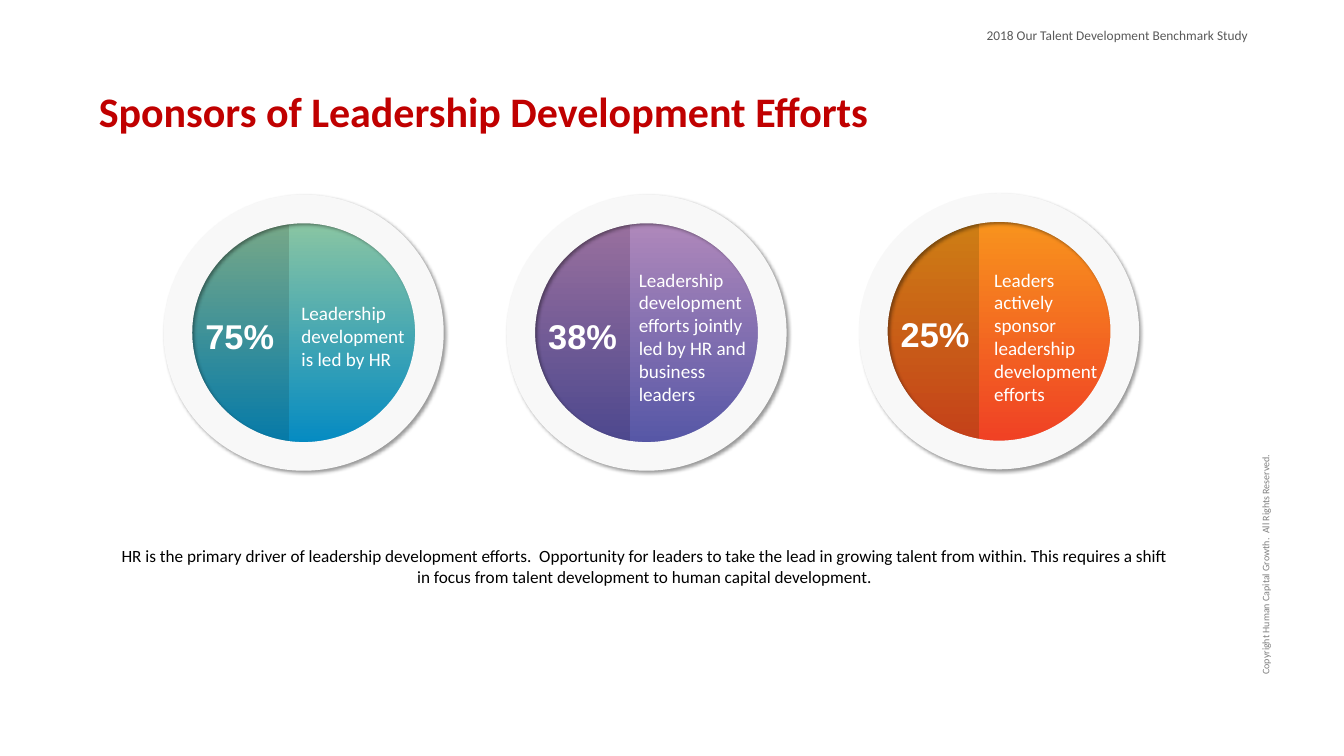
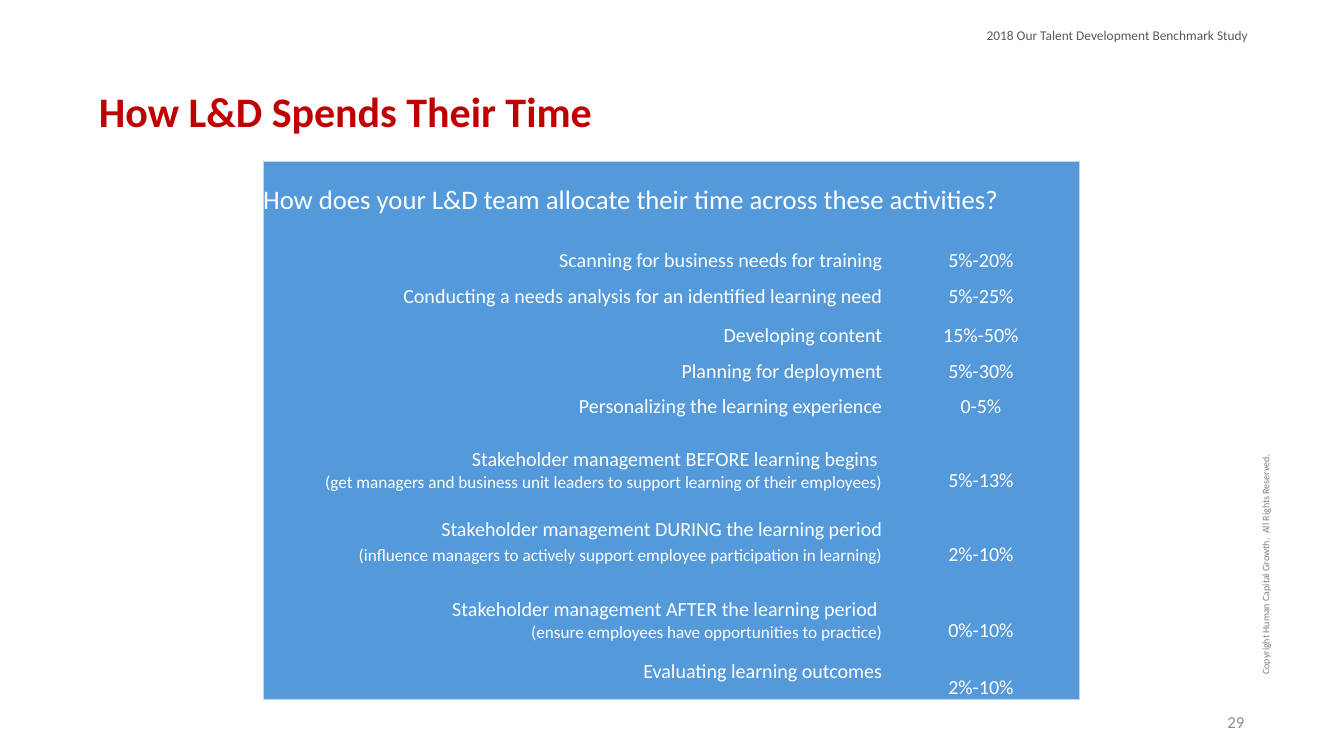
import math
from lxml import etree
from pptx import Presentation, util as u
from pptx.dml.color import RGBColor
from pptx.enum import shapes, text
from pptx.oxml import parse_xml
from pptx.oxml.ns import qn

rgb = RGBColor.from_string
WHITE, RED, EDGE = "FFFFFF", "C00000", "C4D5EB"
LEFT, MID, RIGHT = text.PP_ALIGN.LEFT, text.PP_ALIGN.CENTER, text.PP_ALIGN.RIGHT
TOP, HALF, LOW = text.MSO_ANCHOR.TOP, text.MSO_ANCHOR.MIDDLE, text.MSO_ANCHOR.BOTTOM
SHADE = (
    '<a:outerShdw xmlns:a="http://schemas.openxmlformats.org/drawingml/2006/main" '
    'blurRad="50800" dist="38100" dir="2700000" algn="tl" rotWithShape="0">'
    '<a:srgbClr val="000000"><a:alpha val="40000"/></a:srgbClr></a:outerShdw>'
)

deck = Presentation()
deck.slide_width, deck.slide_height = u.Inches(19.56), u.Inches(11)
X, Y = deck.slide_width / 100, deck.slide_height / 100


def add_run(par, words, size, ink=WHITE, face="Calibri", bold=False):
    run = par.add_run()
    run.text = words
    run.font.size, run.font.name, run.font.bold = u.Pt(size), face, bold
    run.font.color.rgb = rgb(ink)
    return run


def add_text(page, x, y, w, h, words, size, ink, align=LEFT, anchor=TOP,
             wrap=True, face="Calibri", bold=False):
    box = page.shapes.add_textbox(round(x * X), round(y * Y), round(w * X), round(h * Y))
    box.text_frame.word_wrap = wrap
    box.text_frame.vertical_anchor = anchor
    par = box.text_frame.paragraphs[0]
    par.alignment = align
    add_run(par, words, size, ink, face, bold)
    return box


pages = []
for title in ["Sponsors of Leadership Development Efforts", "How L&D Spends Their Time"]:
    page = deck.slides.add_slide(deck.slide_layouts[6])
    side = add_text(page, 84.76, 71.64, 18.76, 3.64,
                    "Copyright Human Capital Growth.  All Rights Reserved.",
                    10.5, "808080", anchor=HALF)
    side.rotation = 270
    add_text(page, 72.9, 3.18, 21.27, 3.09, "2018 Our Talent Development Benchmark Study",
             14, "595959", wrap=False)
    head = add_text(page, 6.85, 5.36, 86.25, 19.36, title, 44, RED, anchor=HALF, bold=True)
    head.text_frame.paragraphs[0].line_spacing = 0.9
    pages.append(page)

page = pages[0]
cut = math.acos(-0.147)
steps = 48
discs = [
    ("75%", "Leadership development is led by HR", (13.24, 27.64), (21.93, 39.45, 10.09),
     (22.83, 43.73, 8.84), (22.83, 43.73, 8.84), ("7CAA86", "0379A9"), ("90C8A1", "0189C3")),
    ("38%", "Leadership development efforts jointly led by HR and business leaders",
     (38.75, 27.64), (47.03, 35, 19.27),
     (48.18, 44.59, 8.84), (48.18, 44.59, 8.84), ("9A709E", "49468D"), ("B189BB", "5154A5")),
    ("25%", "Leaders actively sponsor leadership development efforts",
     (64.98, 27.45), (73.47, 35, 19.27),
     (77.45, 44, 12.27), (74.13, 44.41, 8.84), ("CE8014", "C43E1A"), ("F8951D", "EF3C25")),
]
for share, note, (rx, ry), (nx, ny, nh), dark, light, deep, pale in discs:
    for (cx, cy, wide), tones, start, end in [
        (dark, deep, cut, 2 * math.pi - cut),
        (light, pale, -cut, cut),
    ]:
        turns = [start + (end - start) * i / steps for i in range(steps + 1)]
        dots = [(round((cx + wide * math.cos(t)) * X), round((cy + 15.7 * math.sin(t)) * Y))
                for t in turns]
        pen = page.shapes.build_freeform(*dots[0])
        pen.add_line_segments(dots[1:], close=True)
        part = pen.convert_to_shape()
        part.shadow.inherit = False
        part.line.fill.background()
        part.fill.gradient()
        part.fill.gradient_angle = 270
        for stop, tone in zip(part.fill.gradient_stops, tones):
            stop.color.rgb = rgb(tone)

    box = add_text(page, rx + 1.5, ry + 13.54, 6.19, 6.45, share, 36, WHITE, MID,
                   wrap=False, face="Arial", bold=True)
    ink = box.text_frame.paragraphs[0].runs[0].font._element.find(qn("a:solidFill"))
    glow = etree.Element(qn("a:effectLst"))
    glow.append(parse_xml(SHADE))
    ink.addnext(glow)

    ring = page.shapes.add_shape(shapes.MSO_SHAPE.OVAL, round(rx * X), round(ry * Y),
                                 round(18.71 * X), round(32.73 * Y))
    ring.fill.background()
    ring.line.color.rgb = rgb("F8F8F8")
    ring.line.width = u.Pt(30)
    ring.shadow.inherit = False
    ring._element.spPr.find(qn("a:effectLst")).append(parse_xml(SHADE))
    add_text(page, nx, ny, 9.25, nh, note, 20, WHITE)

add_text(page, 8.08, 71.73, 79.75, 6.45,
         "HR is the primary driver of leadership development efforts.  Opportunity for leaders "
         "to take the lead in growing talent from within. This requires a shift in focus from "
         "talent development to human capital development.", 18, "000000", MID)

page = pages[1]
rows = [
    (7.45, "How does your L&D team allocate their time across these activities?", "", ""),
    (7.36, "Scanning for business needs for training", "", "5%-20%"),
    (4.82, "Conducting a needs analysis for an identified learning need", "", "5%-25%"),
    (5.09, "Developing content", "", "15%-50%"),
    (4.82, "Planning for deployment", "", "5%-30%"),
    (4.55, "Personalizing the learning experience", "", "0-5%"),
    (9.82, "Stakeholder management BEFORE learning begins ",
     "(get managers and business unit leaders to support learning of their employees)", "5%-13%"),
    (9.82, "Stakeholder management DURING the learning period",
     "(influence managers to actively support employee participation in learning)", "2%-10%"),
    (10.09, "Stakeholder management AFTER the learning period ",
     "(ensure employees have opportunities to practice)", "0%-10%"),
    (7.45, "Evaluating learning outcomes", "", "2%-10%"),
]
last = len(rows) - 1
grid = page.shapes.add_table(len(rows), 2, round(19.58 * X), round(21.27 * Y),
                             round(60.75 * X), round(71.27 * Y)).table
grid.first_row = grid.horz_banding = False
grid.columns[0].width, grid.columns[1].width = round(46.06 * X), round(14.69 * X)
grid.cell(0, 0).merge(grid.cell(0, 1))
for r, (high, label, hint, span) in enumerate(rows):
    grid.rows[r].height = round(high * Y)
    for c in range(2):
        cell = grid.cell(r, c)
        cell.margin_left = cell.margin_right = cell.margin_top = cell.margin_bottom = 0
        cell.vertical_anchor = HALF if r == last and c == 0 else LOW
        cell.fill.solid()
        cell.fill.fore_color.rgb = rgb("5499DA")
        sides = [("L", c == 0), ("R", c == 1 or r == 0), ("T", r == 0), ("B", r == last)]
        for i, (name, outer) in enumerate(sides):
            line = etree.Element(qn("a:ln" + name), w="6350")
            if outer:
                fill = etree.SubElement(line, qn("a:solidFill"))
                etree.SubElement(fill, qn("a:srgbClr"), val=EDGE)
            else:
                etree.SubElement(line, qn("a:noFill"))
            cell._tc.tcPr.insert(i, line)

    frame = grid.cell(r, 0).text_frame
    par = frame.paragraphs[0]
    if r == 0:
        add_run(par, label, 28)
        continue
    add_run(par, label, 21)
    if hint:
        par = frame.add_paragraph()
        if "DURING" in label:
            add_run(par, " ", 21)
        add_run(par, hint, 18)
    for par in frame.paragraphs:
        par.alignment, par.level = RIGHT, 1
        props = par._p.get_or_add_pPr()
        props.set("marL", "457200")
        props.set("indent", "0")
    par = grid.cell(r, 1).text_frame.paragraphs[0]
    par.alignment = MID
    add_run(par, span, 21)

add_text(page, 70.6, 92.73, 22.49, 5.36, "29", 17.6, "8C8C8C", RIGHT, HALF)

deck.save("out.pptx")
